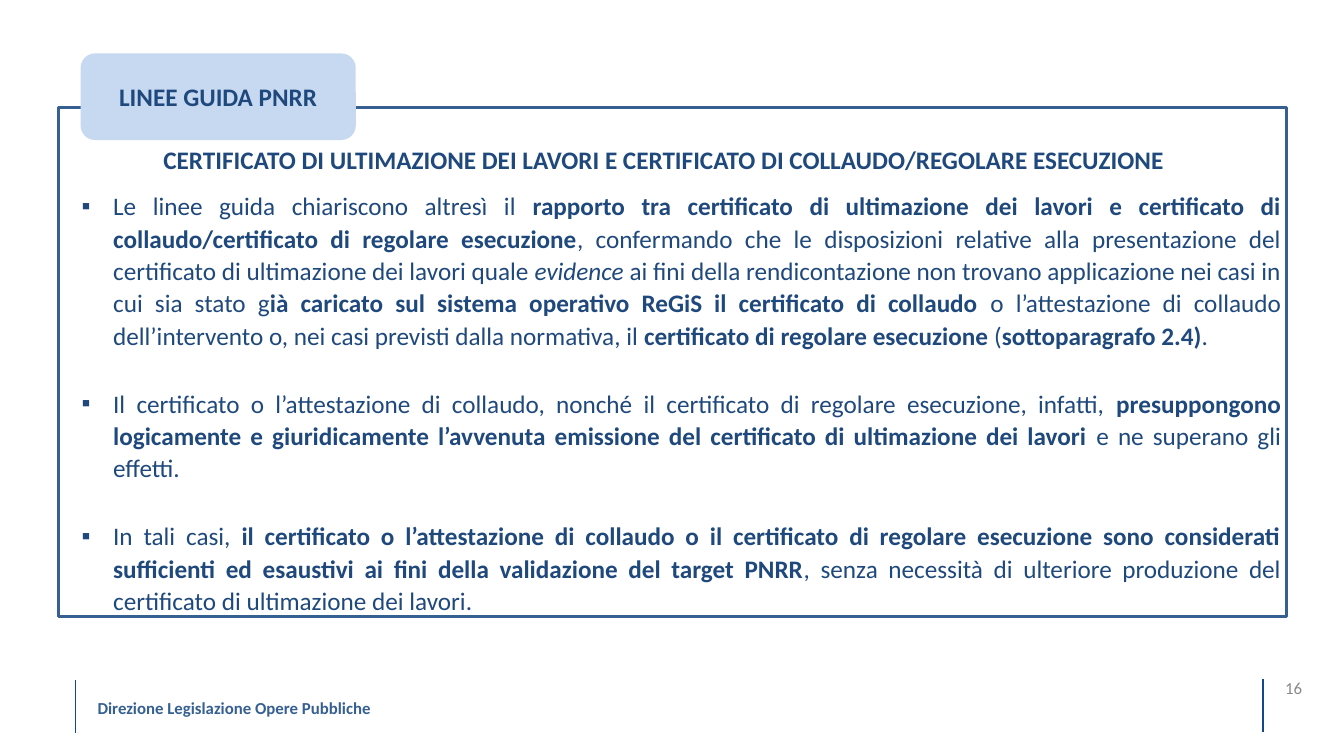
from dataclasses import dataclass, field
from typing import Any

from lxml import etree
from pptx import Presentation
from pptx import util as u
from pptx.dml.color import RGBColor
from pptx.enum import shapes, text
from pptx.oxml.ns import qn

COLOURS = {
    "navy": "1F497D",
    "blue": "376092",
    "rule": "11498A",
    "pale": "C6D9F1",
    "grey": "888888",
}
Span = tuple[str, str]  # wording and style: "" plain, "b" bold, "i" italic
Area = tuple[float, float, float, float]  # left, top, width, height in points

HEADING = "CERTIFICATO DI ULTIMAZIONE DEI LAVORI E CERTIFICATO DI COLLAUDO/REGOLARE ESECUZIONE"
POINTS: list[list[Span]] = [
    [
        ("Le linee guida chiariscono altresì il ", ""),
        ("rapporto tra certificato di ultimazione dei lavori e certificato di "
         "collaudo/certificato di regolare esecuzione", "b"),
        (", confermando che le disposizioni relative alla presentazione del certificato "
         "di ultimazione dei lavori quale ", ""),
        ("evidence", "i"),
        (" ai fini della rendicontazione non trovano applicazione nei casi in cui sia stato g", ""),
        ("ià caricato sul sistema operativo ReGiS il certificato di collaudo ", "b"),
        ("o l’attestazione di collaudo dell’intervento o, nei casi previsti dalla normativa, il ", ""),
        ("certificato di regolare esecuzione ", "b"),
        ("(", ""),
        ("sottoparagrafo 2.4)", "b"),
        (".", ""),
    ],
    [
        ("Il certificato o l’attestazione di collaudo, nonché il certificato di regolare "
         "esecuzione, infatti, ", ""),
        ("presuppongono logicamente e giuridicamente l’avvenuta emissione del certificato "
         "di ultimazione dei lavori ", "b"),
        ("e ne superano gli effetti.", ""),
    ],
    [
        ("In tali casi, ", ""),
        ("il certificato o l’attestazione di collaudo o il certificato di regolare esecuzione "
         "sono considerati sufficienti ed esaustivi ai fini della validazione del target PNRR", "b"),
        (", senza necessità di ulteriore produzione del certificato di ultimazione dei lavori.", ""),
    ],
]


@dataclass
class Label:
    area: Area
    paras: list[list[Span]]
    size: float = 18
    colour: str = "navy"
    bullet: str = ""
    gap: float = 0
    frame: dict[str, Any] = field(default_factory=dict)
    para: dict[str, Any] = field(default_factory=dict)


@dataclass
class Rule:
    x: float
    top: float
    length: float = 37.44


NO_INSETS = {f"margin_{side}": 0 for side in ("left", "top", "right", "bottom")}
CENTRED = {"alignment": text.PP_ALIGN.CENTER}

TITLE = Label((51.12, 99.36, 846, 28.8), [[(HEADING, "b")]], para=CENTRED)
BODY = Label((51.12, 131.04, 871.2, 314.64), POINTS, bullet="▪", gap=25.5,
             para={"alignment": text.PP_ALIGN.JUSTIFY, "line_spacing": 1.07})
TAB = Label((57.6, 38.16, 196.56, 61.92), [[("LINEE GUIDA PNRR", "b")]],
            frame=NO_INSETS | {"vertical_anchor": text.MSO_ANCHOR.MIDDLE}, para=CENTRED)
FOOTER = Label((62.64, 494.64, 479.52, 21.6),
               [[("Direzione Legislazione Opere Pubbliche", "b")]], 12, "blue")
PAGE_NUMBER = Label((905.76, 486, 36.72, 22.32), [[("16", "")]], 12, "grey",
                    frame=NO_INSETS, para=CENTRED | {"line_spacing": u.Pt(12.4)})
FRAME: Area = (41.76, 77.04, 876.96, 363.6)
RULES = [Rule(54, 486), Rule(902.16, 485.28)]


def rgb(name: str) -> RGBColor:
    return RGBColor.from_string(COLOURS[name])


def set_all(target: Any, values: dict[str, Any]) -> None:
    for name, value in values.items():
        setattr(target, name, value)


def place(box: Any, area: Area) -> None:
    set_all(box, dict(zip(("left", "top", "width", "height"), map(u.Pt, area))))


def add_bullet(para: Any, mark: str) -> None:
    """Give the paragraph a hanging indent and a bullet mark."""
    props = para._p.get_or_add_pPr()
    props.set("marL", str(u.Pt(22.5)))
    props.set("indent", str(u.Pt(-22.5)))
    etree.SubElement(props, qn("a:buFont")).set("typeface", "Arial")
    etree.SubElement(props, qn("a:buChar")).set("char", mark)


def write(box: Any, label: Label) -> None:
    """Place the box and fill it with the label's formatted paragraphs."""
    place(box, label.area)
    frame = box.text_frame
    set_all(frame, {"word_wrap": True, "auto_size": text.MSO_AUTO_SIZE.NONE,
                    "vertical_anchor": text.MSO_ANCHOR.TOP} | label.frame)
    for index, spans in enumerate(label.paras):
        para = frame.add_paragraph() if index else frame.paragraphs[0]
        set_all(para, {"space_before": u.Pt(label.gap if index else 0)} | label.para)
        if label.bullet:
            add_bullet(para, label.bullet)
        for wording, style in spans:
            span = para.add_run()
            span.text = wording
            set_all(span.font, {"name": "Calibri", "size": u.Pt(label.size),
                                "bold": style == "b", "italic": style == "i"})
            span.font.color.rgb = rgb(label.colour)


def add_block(page: Any, kind: Any, area: Area) -> Any:
    block = page.shapes.add_shape(kind, *map(u.Pt, area))
    block.shadow.inherit = False
    return block


def add_rule(page: Any, rule: Rule) -> None:
    line = page.shapes.add_connector(
        shapes.MSO_CONNECTOR.STRAIGHT,
        *map(u.Pt, (rule.x, rule.top, rule.x, rule.top + rule.length)))
    line.line.color.rgb = rgb("rule")
    line.line.width = u.Pt(1)
    etree.SubElement(line._element.spPr, qn("a:effectLst"))


def main() -> None:
    deck = Presentation()
    deck.slide_width, deck.slide_height = u.Pt(960), u.Pt(540)
    page = deck.slides.add_slide(deck.slide_layouts[1])

    for rule in RULES:
        add_rule(page, rule)
    for label in (FOOTER, PAGE_NUMBER):
        write(page.shapes.add_textbox(*map(u.Pt, label.area)), label)

    border = add_block(page, shapes.MSO_SHAPE.RECTANGLE, FRAME)
    border.fill.background()
    border.line.color.rgb = rgb("blue")
    border.line.width = u.Pt(2)

    tab = add_block(page, shapes.MSO_SHAPE.ROUNDED_RECTANGLE, TAB.area)
    tab.fill.solid()
    tab.fill.fore_color.rgb = rgb("pale")
    tab.line.fill.background()
    write(tab, TAB)

    write(page.shapes.title, TITLE)
    write(page.placeholders[1], BODY)
    deck.save("out.pptx")


if __name__ == "__main__":
    main()
